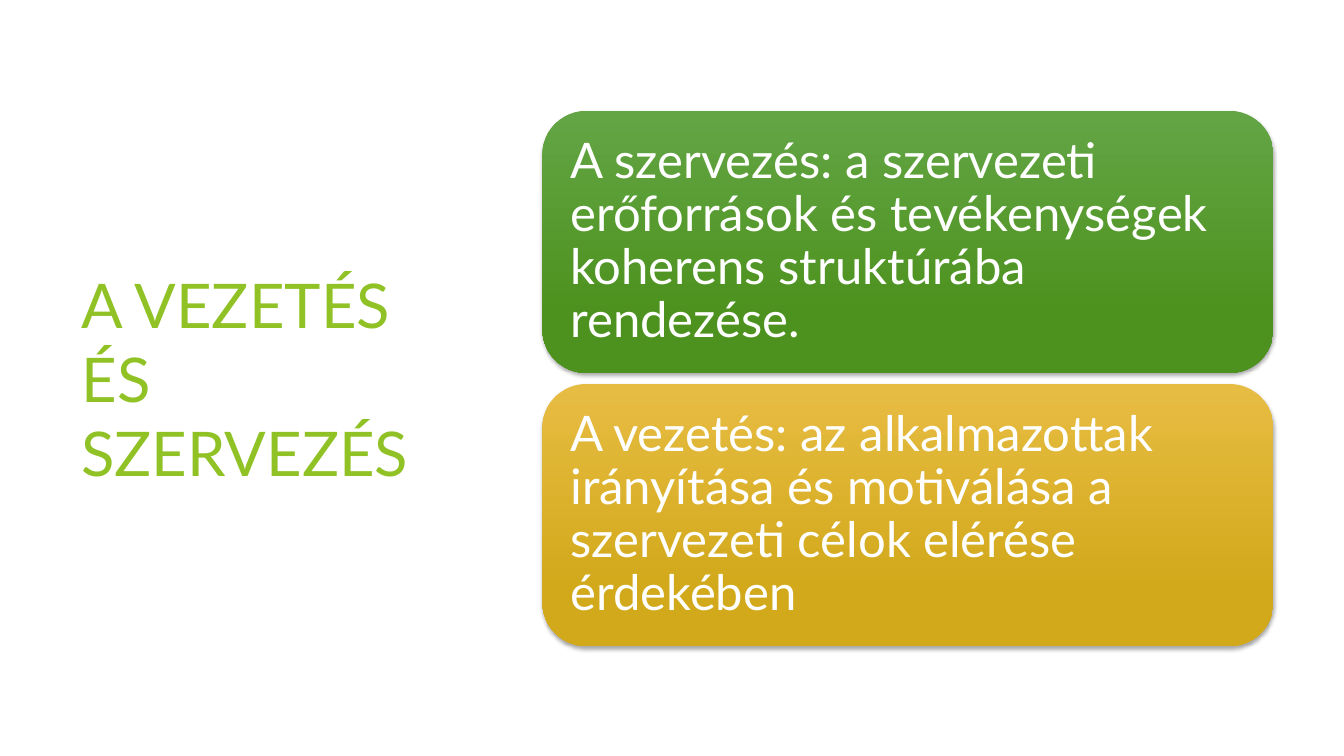
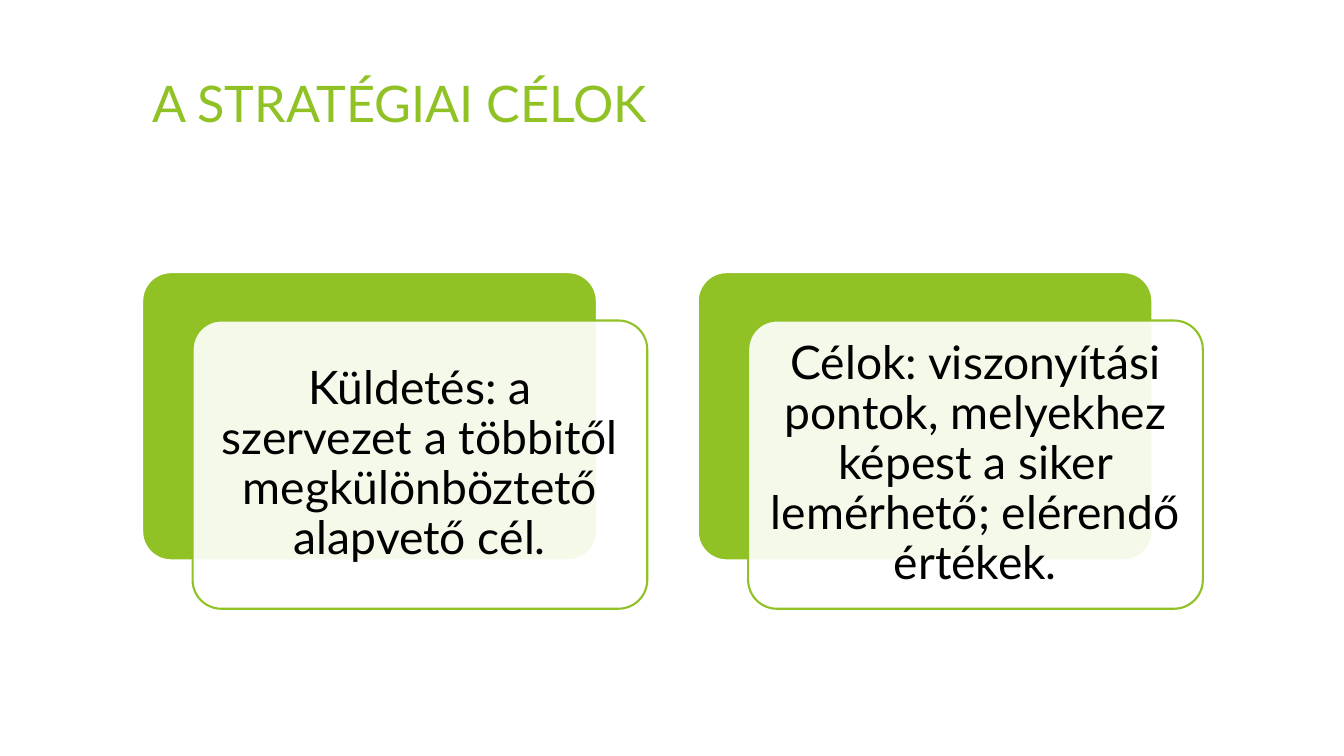
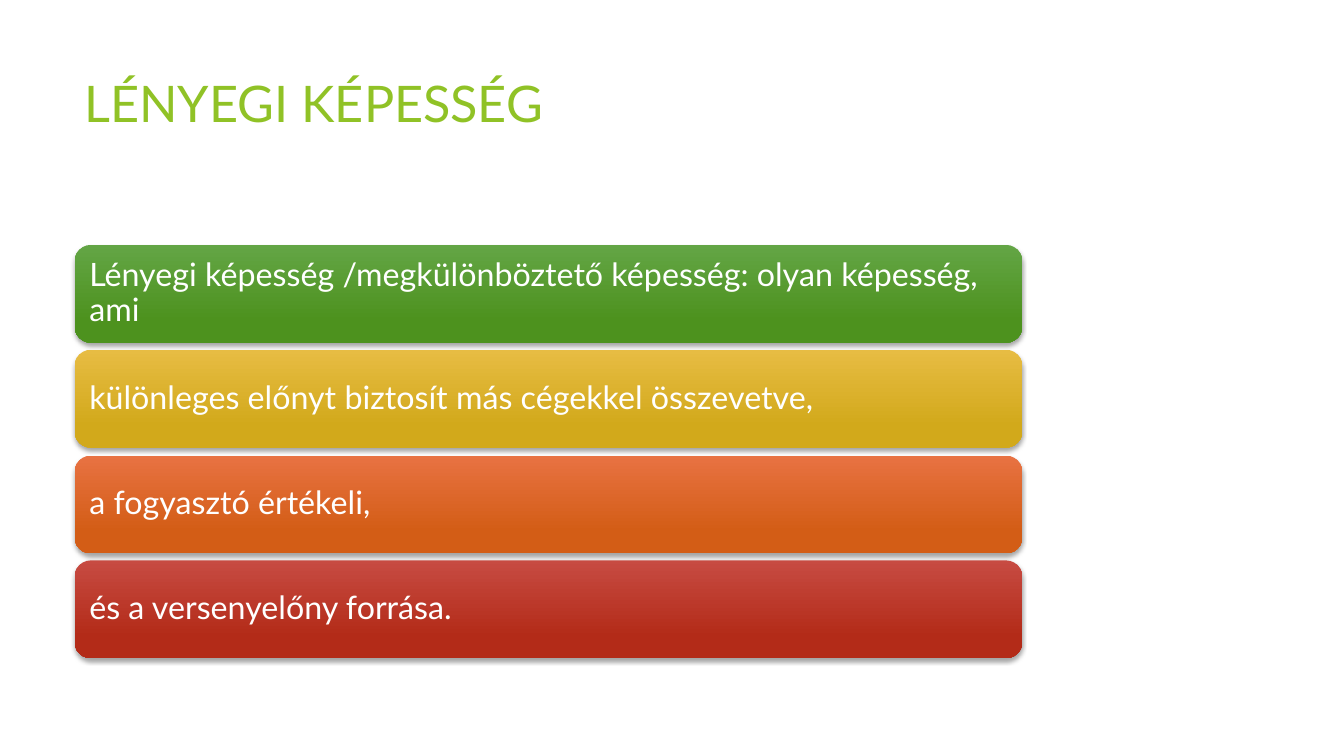
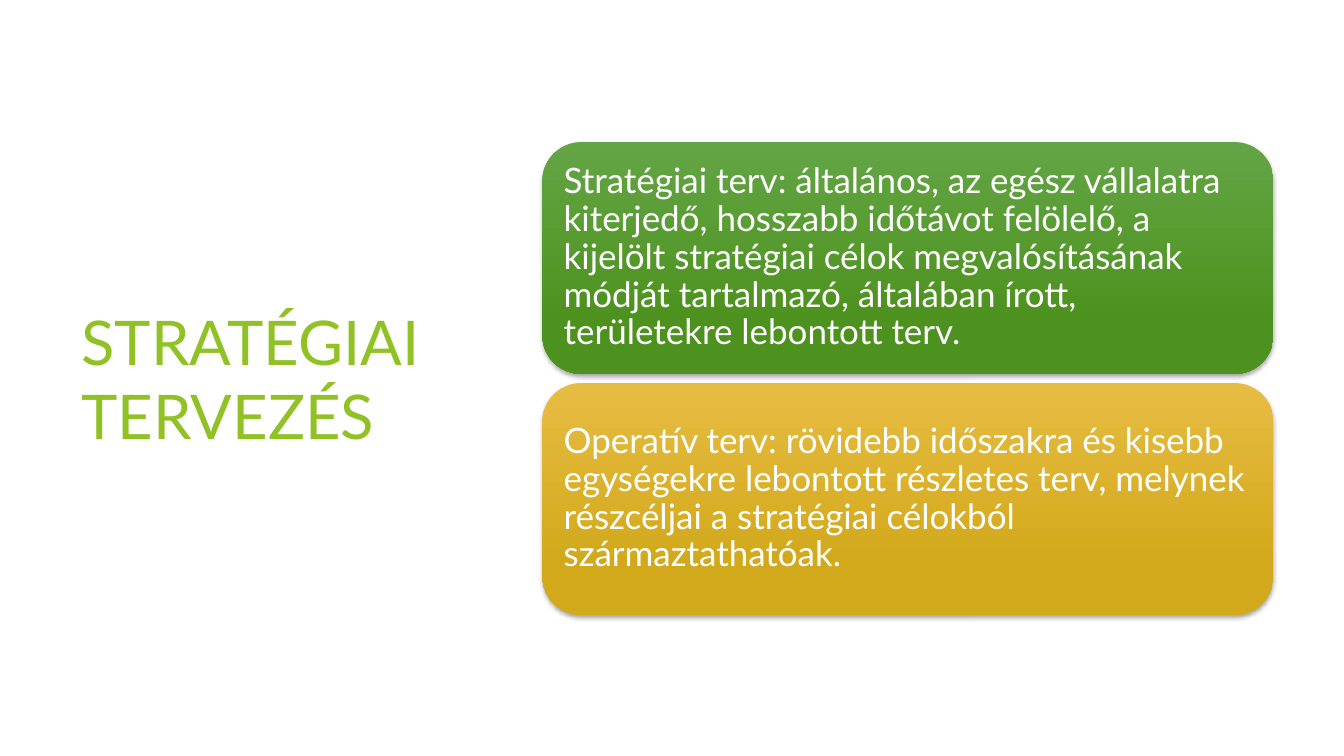
from dataclasses import dataclass

from lxml.etree import SubElement
from pptx import Presentation
from pptx.dml.color import RGBColor
from pptx.enum.shapes import MSO_SHAPE
from pptx.enum.text import MSO_ANCHOR, PP_ALIGN
from pptx.oxml.ns import qn
from pptx.shapes.autoshape import Shape
from pptx.slide import Slide
from pptx.util import Emu, Pt

PX = 9144
FONT = "Lato"
COLORS = {
    "lime": "90C226",
    "white": "FFFFFF",
    "black": "000000",
}
GRADIENTS = [
    ("63A545", "4D921E"),
    ("E7BC43", "D2A91B"),
    ("E87242", "D35D16"),
    ("C74B42", "B32B18"),
]


@dataclass(frozen=True)
class Box:
    left: int
    top: int
    width: int
    height: int

    def emu(self) -> tuple[Emu, ...]:
        return tuple(Emu(n * PX) for n in (self.left, self.top, self.width, self.height))

    def moved(self, right: int, down: int) -> "Box":
        return Box(self.left + right, self.top + down, self.width, self.height)


@dataclass(frozen=True)
class Title:
    text: str
    box: Box
    size: int
    anchor: MSO_ANCHOR


@dataclass(frozen=True)
class CardStack:
    first: Box
    bottom: int
    size: int
    inset: int
    statements: tuple[str, ...]


@dataclass(frozen=True)
class LayeredCards:
    first: Box
    pitch: int
    offset: tuple[int, int]
    size: int
    inset: int
    statements: tuple[str, ...]


SIDE_TITLE = Box(71, 151, 388, 448)

CONTENT = [
    (
        Title("A VEZETÉS ÉS SZERVEZÉS", SIDE_TITLE, 44, MSO_ANCHOR.MIDDLE),
        CardStack(Box(538, 110, 725, 260), 641, 35, 15, (
            "A szervezés: a szervezeti erőforrások és tevékenységek koherens "
            "struktúrába rendezése.",
            "A vezetés: az alkalmazottak irányítása és motiválása a szervezeti "
            "célok elérése érdekében",
        )),
    ),
    (
        Title("A STRATÉGIAI CÉLOK", Box(141, 67, 1115, 120), 36, MSO_ANCHOR.TOP),
        LayeredCards(Box(141, 270, 451, 286), 551, (50, 48), 33, 14, (
            "Küldetés: a szervezet a többitől megkülönböztető alapvető cél.",
            "Célok: viszonyítási pontok, melyekhez képest a siker lemérhető; "
            "elérendő értékek.",
        )),
    ),
    (
        Title("LÉNYEGI KÉPESSÉG", Box(74, 67, 940, 144), 36, MSO_ANCHOR.TOP),
        CardStack(Box(74, 243, 940, 97), 653, 23, 10, (
            "Lényegi képesség /megkülönböztető képesség: olyan képesség, ami",
            "különleges előnyt biztosít más cégekkel összevetve,",
            "a fogyasztó értékeli,",
            "és a versenyelőny forrása.",
        )),
    ),
    (
        Title("STRATÉGIAI TERVEZÉS", SIDE_TITLE, 44, MSO_ANCHOR.MIDDLE),
        CardStack(Box(538, 141, 725, 230), 610, 25, 10, (
            "Stratégiai terv: általános, az egész vállalatra kiterjedő, hosszabb "
            "időtávot felölelő, a kijelölt stratégiai célok megvalósításának módját "
            "tartalmazó, általában írott, területekre lebontott terv.",
            "Operatív terv: rövidebb időszakra és kisebb egységekre lebontott "
            "részletes terv, melynek részcéljai a stratégiai célokból "
            "származtathatóak.",
        )),
    ),
]


def rgb(name: str) -> RGBColor:
    return RGBColor.from_string(COLORS[name])


def write(shape: Shape, text: str, size: int, color: str, anchor: MSO_ANCHOR,
          align: PP_ALIGN = PP_ALIGN.LEFT) -> None:
    frame = shape.text_frame
    frame.word_wrap = True
    frame.vertical_anchor = anchor
    paragraph = frame.paragraphs[0]
    paragraph.alignment = align
    run = paragraph.add_run()
    run.text = text
    run.font.name = FONT
    run.font.size = Pt(size)
    run.font.color.rgb = rgb(color)


def write_statement(card: Shape, text: str, size: int, inset: int, color: str,
                    align: PP_ALIGN = PP_ALIGN.LEFT) -> None:
    write(card, text, size, color, MSO_ANCHOR.MIDDLE, align)
    frame = card.text_frame
    frame.margin_left = frame.margin_right = Emu(inset * PX)
    frame.margin_top = frame.margin_bottom = Emu(inset * PX)
    paragraph = frame.paragraphs[0]
    paragraph.line_spacing = 0.9
    space_after = SubElement(paragraph._p.get_or_add_pPr(), qn("a:spcAft"))
    SubElement(space_after, qn("a:spcPct"), val="35000")


def add_card(slide: Slide, box: Box) -> Shape:
    card = slide.shapes.add_shape(MSO_SHAPE.ROUNDED_RECTANGLE, *box.emu())
    card.shadow.inherit = False
    return card


def add_soft_shadow(card: Shape) -> None:
    effects = card._element.spPr.find(qn("a:effectLst"))
    shadow = SubElement(effects, qn("a:outerShdw"), blurRad=str(Pt(3)),
                        dist=str(Pt(2)), dir="5400000", rotWithShape="0")
    tint = SubElement(shadow, qn("a:srgbClr"), val=COLORS["black"])
    SubElement(tint, qn("a:alpha"), val="35000")


def fill_gradient(card: Shape, colors: tuple[str, str]) -> None:
    card.fill.gradient()
    card.fill.gradient_angle = 270
    for stop, position, color in zip(card.fill.gradient_stops, (0, 0.78), colors):
        stop.position = position
        stop.color.rgb = RGBColor.from_string(color)


def fill_outlined(card: Shape, fill: str, line: str, opacity: int = 100) -> None:
    card.adjustments[0] = 0.1
    card.fill.solid()
    card.fill.fore_color.rgb = rgb(fill)
    if opacity < 100:
        tint = card._element.spPr.find(f"{qn('a:solidFill')}/{qn('a:srgbClr')}")
        SubElement(tint, qn("a:alpha"), val=str(opacity * 1000))
    card.line.color.rgb = rgb(line)
    card.line.width = Pt(1.5)


def draw_title(slide: Slide, title: Title) -> None:
    heading = slide.shapes.add_textbox(*title.box.emu())
    write(heading, title.text, title.size, "lime", title.anchor)


def draw_stack(slide: Slide, stack: CardStack) -> None:
    first = stack.first
    pitch = (stack.bottom - first.height - first.top) / (len(stack.statements) - 1)
    for row, (statement, colors) in enumerate(zip(stack.statements, GRADIENTS)):
        card = add_card(slide, first.moved(0, round(row * pitch)))
        fill_gradient(card, colors)
        card.line.fill.background()
        add_soft_shadow(card)
        write_statement(card, statement, stack.size, stack.inset, "white")


def draw_layers(slide: Slide, layers: LayeredCards) -> None:
    for column, statement in enumerate(layers.statements):
        back_box = layers.first.moved(column * layers.pitch, 0)
        back = add_card(slide, back_box)
        fill_outlined(back, "lime", "white")
        front = add_card(slide, back_box.moved(*layers.offset))
        fill_outlined(front, "white", "lime", opacity=90)
        write_statement(front, statement, layers.size, layers.inset, "black",
                        PP_ALIGN.CENTER)


def main() -> None:
    deck = Presentation()
    deck.slide_width = Emu(1333 * PX)
    deck.slide_height = Emu(750 * PX)
    for title, body in CONTENT:
        slide = deck.slides.add_slide(deck.slide_layouts[6])
        draw_title(slide, title)
        if isinstance(body, CardStack):
            draw_stack(slide, body)
        else:
            draw_layers(slide, body)
    deck.save("out.pptx")


if __name__ == "__main__":
    main()
